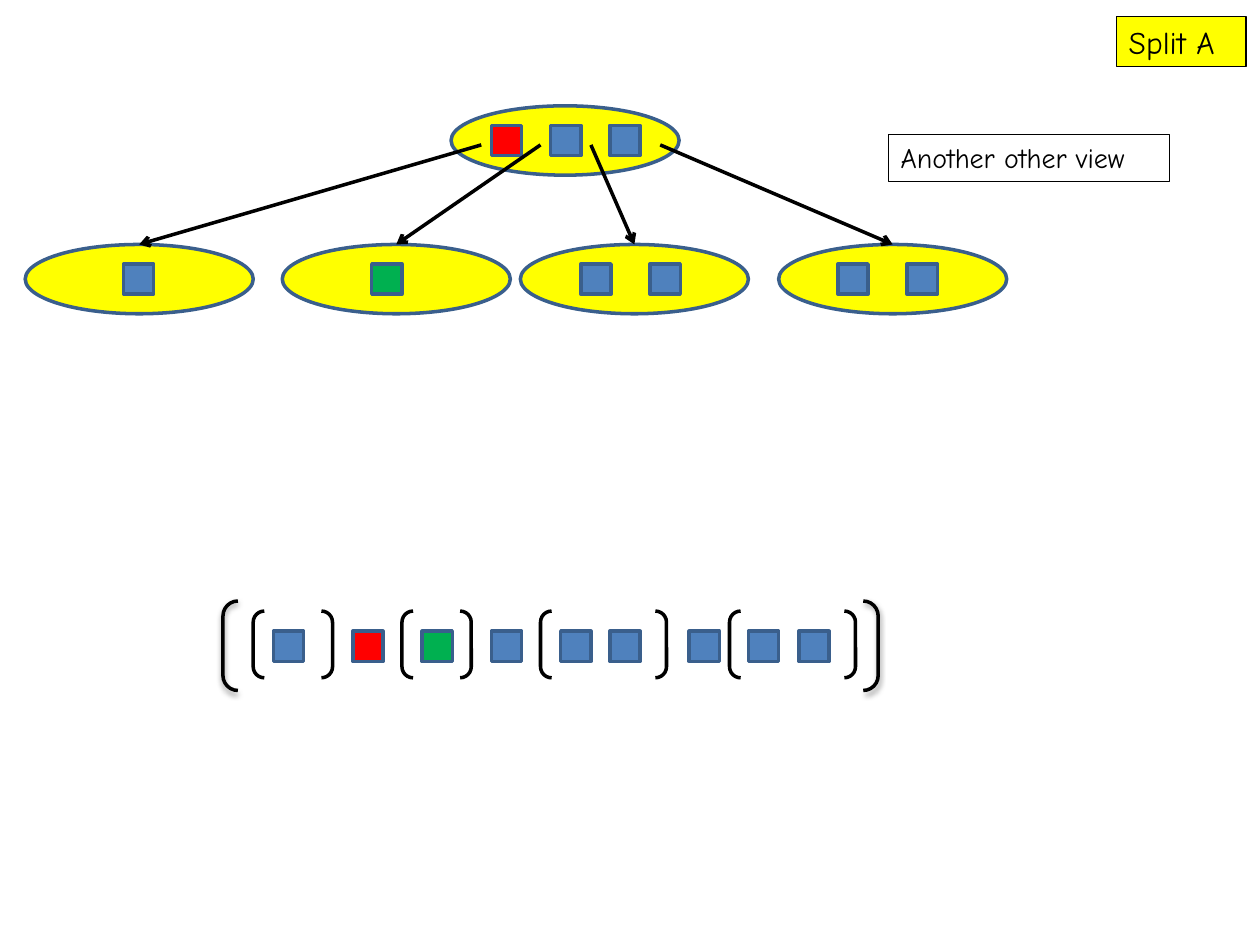
from lxml.etree import SubElement
from pptx import Presentation
from pptx.dml.color import RGBColor
from pptx.enum.shapes import MSO_CONNECTOR, MSO_SHAPE
from pptx.enum.text import MSO_AUTO_SIZE
from pptx.oxml.ns import qn
from pptx.util import Inches, Pt

YELLOW = RGBColor(0xFF, 0xFF, 0x00)
RED = RGBColor(0xFF, 0x00, 0x00)
GREEN = RGBColor(0x00, 0xB0, 0x50)
BLUE = RGBColor(0x4F, 0x81, 0xBD)
NAVY = RGBColor(0x3A, 0x5F, 0x8C)
BLACK = RGBColor(0x00, 0x00, 0x00)
WHITE = RGBColor(0xFF, 0xFF, 0xFF)

# Labels: text, box, font size, fill
LABELS = [
    ("Split A", (8.86, 0.13, 1.03, 0.4), 18, YELLOW),
    ("Another other view", (7.05, 1.07, 2.23, 0.37), 16, None),
]

# Tree nodes: left, top, keys as (left, colour)
ROOT = (3.58, 0.84, [(3.9, RED), (4.37, BLUE), (4.84, BLUE)])
CHILD_TOP = 1.94
CHILDREN = [
    (0.2, [(0.98, BLUE)]),
    (2.24, [(2.95, GREEN)]),
    (4.13, [(4.61, BLUE), (5.16, BLUE)]),
    (6.18, [(6.65, BLUE), (7.2, BLUE)]),
]
POINTER_STARTS = [3.82, 4.29, 4.69, 5.24]
POINTER_TOP = 1.15
NODE_W, NODE_H, KEY = 1.81, 0.55, 0.24

# The same tree as nested brackets
OUTER_BRACKET = (1.77, 4.77, 5.2, 0.71)
INNER_BRACKETS = [(2.01, 0.63), (3.19, 0.55), (4.29, 1.0), (5.79, 1.0)]
BRACKET_TOP, BRACKET_H = 4.85, 0.53
SEQUENCE_TOP = 5.01
SEQUENCE = [
    (2.17, BLUE), (2.8, RED), (3.35, GREEN), (3.9, BLUE), (4.45, BLUE),
    (4.84, BLUE), (5.47, BLUE), (5.94, BLUE), (6.34, BLUE),
]

prs = Presentation()
prs.slide_width, prs.slide_height = Inches(10), Inches(7.5)
slide = prs.slides.add_slide(prs.slide_layouts[6])


def add_shape(kind, box, fill, line, width=2):
    shape = slide.shapes.add_shape(kind, *map(Inches, box))
    shape.shadow.inherit = False
    if fill is None:
        shape.fill.background()
    else:
        shape.fill.solid()
        shape.fill.fore_color.rgb = fill
    shape.line.color.rgb = line
    shape.line.width = Pt(width)
    return shape


def add_keys(keys, top):
    for left, colour in keys:
        add_shape(MSO_SHAPE.RECTANGLE, (left, top, KEY, KEY), colour, NAVY)


def add_node(left, top, keys):
    add_shape(MSO_SHAPE.OVAL, (left, top, NODE_W, NODE_H), YELLOW, NAVY)
    add_keys(keys, top + (NODE_H - KEY) / 2)


def add_pointer(x1, y1, x2, y2):
    pointer = slide.shapes.add_connector(
        MSO_CONNECTOR.STRAIGHT, *map(Inches, (x1, y1, x2, y2)))
    pointer.line.color.rgb = BLACK
    pointer.line.width = Pt(2)
    SubElement(pointer.line._get_or_add_ln(), qn("a:tailEnd"), type="arrow")
    SubElement(pointer._element.spPr, qn("a:effectLst"))


def add_drop_shadow(shape):
    effects = shape._element.spPr.find(qn("a:effectLst"))
    shadow = SubElement(
        effects, qn("a:outerShdw"), blurRad=str(Pt(3.1)), dist=str(Pt(1.6)),
        dir="5400000", rotWithShape="0")
    colour = SubElement(shadow, qn("a:srgbClr"), val=str(BLACK))
    SubElement(colour, qn("a:alpha"), val="38000")


# Labels
for text, box, size, fill in LABELS:
    label = slide.shapes.add_textbox(*map(Inches, box))
    if fill is not None:
        label.fill.solid()
        label.fill.fore_color.rgb = fill
    label.line.color.rgb = BLACK
    label.line.width = Pt(0.75)
    frame = label.text_frame
    frame.word_wrap = True
    frame.auto_size = MSO_AUTO_SIZE.SHAPE_TO_FIT_TEXT
    frame.text = text
    font = frame.paragraphs[0].runs[0].font
    font.name, font.size = "Comic Neue", Pt(size)
    font.color.rgb = BLACK

# Tree, with each pointer ending at the top centre of its child
add_node(*ROOT)
for start, (left, keys) in zip(POINTER_STARTS, CHILDREN):
    add_node(left, CHILD_TOP, keys)
    add_pointer(start, POINTER_TOP, left + NODE_W / 2, CHILD_TOP)

# Bracketed sequence
add_drop_shadow(add_shape(MSO_SHAPE.DOUBLE_BRACKET, OUTER_BRACKET, None, BLACK))
for left, width in INNER_BRACKETS:
    add_shape(MSO_SHAPE.DOUBLE_BRACKET,
              (left, BRACKET_TOP, width, BRACKET_H), WHITE, BLACK)
add_keys(SEQUENCE, SEQUENCE_TOP)

prs.save("out.pptx")
